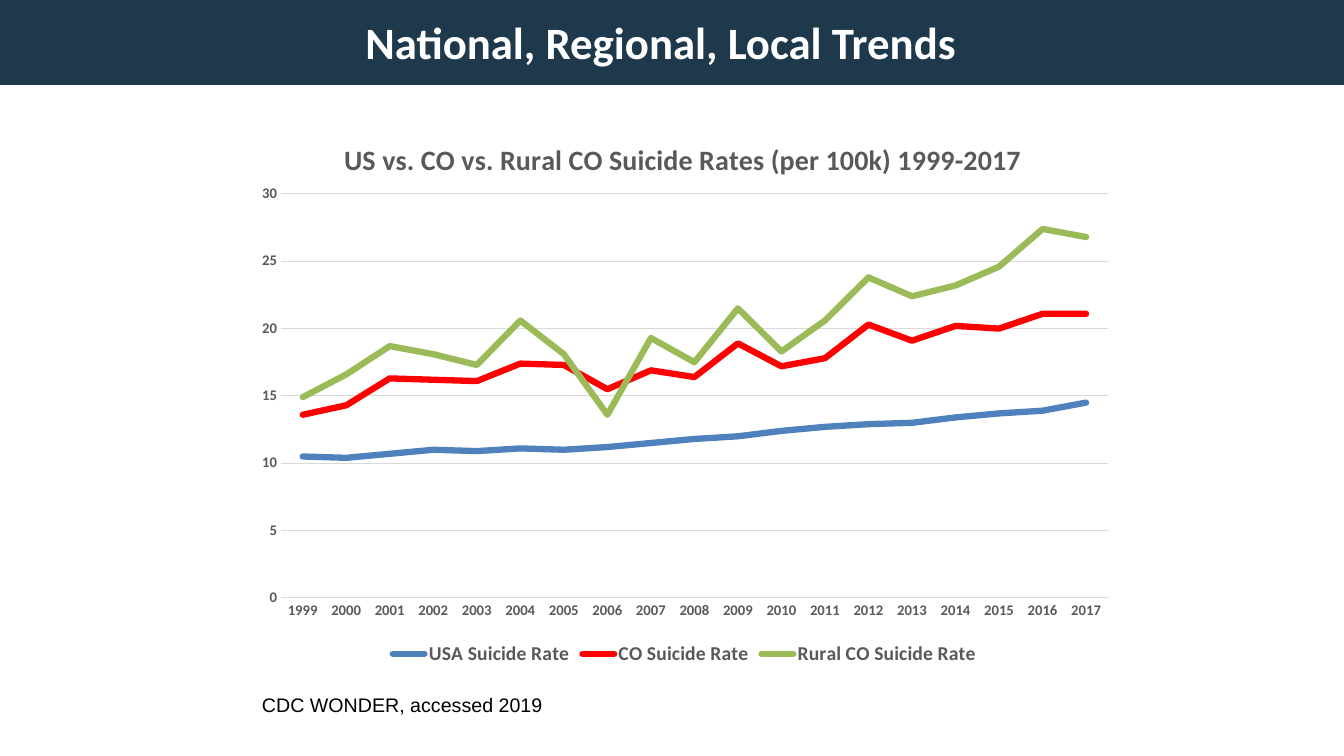
from dataclasses import dataclass

from lxml.etree import SubElement
from pptx import Presentation
from pptx.chart.data import CategoryChartData
from pptx.dml.color import RGBColor
from pptx.enum.chart import XL_CHART_TYPE, XL_LEGEND_POSITION, XL_TICK_MARK
from pptx.enum.shapes import MSO_SHAPE
from pptx.enum.text import MSO_ANCHOR, MSO_AUTO_SIZE, PP_ALIGN
from pptx.oxml.ns import qn
from pptx.util import Pt

EMU_PER_PX = 914400 / 100.8


@dataclass(frozen=True)
class Theme:
    """Colours, fonts and type sizes of the slide."""

    band: str = "1E384C"
    light: str = "FFFFFF"
    dark: str = "000000"
    muted: str = "595959"
    grid: str = "D9D9D9"
    heading_font: str = "Calibri"
    source_font: str = "Arial"
    title_size: float = 32
    chart_title_size: float = 20
    body_size: float = 14
    axis_size: float = 10.5
    grid_width: float = 0.75
    series_width: float = 4.5


THEME = Theme()
YEARS = [str(year) for year in range(1999, 2018)]
RATES = [
    ("USA Suicide Rate", "4F81BD",
     [10.5, 10.4, 10.7, 11, 10.9, 11.1, 11, 11.2, 11.5, 11.8,
      12, 12.4, 12.7, 12.9, 13, 13.4, 13.7, 13.9, 14.5]),
    ("CO Suicide Rate", "FF0000",
     [13.6, 14.3, 16.3, 16.2, 16.1, 17.4, 17.3, 15.5, 16.9, 16.4,
      18.9, 17.2, 17.8, 20.3, 19.1, 20.2, 20, 21.1, 21.1]),
    ("Rural CO Suicide Rate", "9BBB59",
     [14.9, 16.6, 18.7, 18.1, 17.3, 20.6, 18.1, 13.6, 19.3, 17.5,
      21.5, 18.3, 20.6, 23.8, 22.4, 23.2, 24.6, 27.4, 26.8]),
]


def px(length):
    """Turn pixels into EMU."""
    return round(length * EMU_PER_PX)


def place(box):
    """Turn a left, top, width, height box in pixels into EMU."""
    return [px(length) for length in box]


def style_font(font, size, color=THEME.muted, name=THEME.heading_font, bold=True):
    """Set the size, colour, face and weight of a font."""
    font.size = Pt(size)
    font.color.rgb = RGBColor.from_string(color)
    font.name = name
    font.bold = bold


def style_line(line, color, width):
    """Set the colour and width of a line."""
    line.color.rgb = RGBColor.from_string(color)
    line.width = Pt(width)


def write_text(frame, text, align=PP_ALIGN.LEFT, anchor=MSO_ANCHOR.TOP, **font):
    """Write one formatted paragraph into a text frame."""
    frame.word_wrap = True
    frame.auto_size = MSO_AUTO_SIZE.NONE
    frame.vertical_anchor = anchor
    para = frame.paragraphs[0]
    para.alignment = align
    span = para.add_run()
    span.text = text
    style_font(span.font, **font)


def set_layout(layout, chart_box, left, top, width=None, height=None, inner=False):
    """Fix a chart part at pixel offsets inside the chart box."""
    for child in list(layout):
        layout.remove(child)
    manual = SubElement(layout, qn("c:manualLayout"))
    if inner:
        SubElement(manual, qn("c:layoutTarget")).set("val", "inner")
    for mode in ("xMode", "yMode"):
        SubElement(manual, qn(f"c:{mode}")).set("val", "edge")
    spans = {"x": (left, chart_box[2]), "y": (top, chart_box[3]),
             "w": (width, chart_box[2]), "h": (height, chart_box[3])}
    for tag, (length, whole) in spans.items():
        if length is not None:
            SubElement(manual, qn(f"c:{tag}")).set("val", str(round(length / whole, 4)))


def add_header(page, box):
    """Draw the header band behind the title placeholder."""
    left, top, width, height = box
    band = page.shapes.add_shape(MSO_SHAPE.RECTANGLE, *place(box))
    band.shadow.inherit = False
    band.fill.solid()
    band.fill.fore_color.rgb = RGBColor.from_string(THEME.band)
    band.line.fill.background()
    page.shapes._spTree.insert(2, band._element)
    title = page.shapes.title
    title.left, title.top, title.width, title.height = place(
        (left + 46, top + 7, width - 114, height - 15))
    write_text(title.text_frame, "National, Regional, Local Trends",
               align=PP_ALIGN.CENTER, anchor=MSO_ANCHOR.MIDDLE,
               size=THEME.title_size, color=THEME.light)


def style_axes(chart):
    """Format both axes and the gridlines."""
    for axis in (chart.category_axis, chart.value_axis):
        axis.major_tick_mark = axis.minor_tick_mark = XL_TICK_MARK.NONE
        style_font(axis.tick_labels.font, THEME.axis_size)
    style_line(chart.category_axis.format.line, THEME.grid, THEME.grid_width)
    values = chart.value_axis
    values.minimum_scale, values.maximum_scale, values.major_unit = 0, 30, 5
    values.format.line.fill.background()
    style_line(values.major_gridlines.format.line, THEME.grid, THEME.grid_width)


def add_rate_chart(page, box):
    """Draw the line chart of the three rates."""
    table = CategoryChartData()
    table.categories = YEARS
    for name, _, rates in RATES:
        table.add_series(name, rates)
    chart = page.shapes.add_chart(XL_CHART_TYPE.LINE, *place(box), table).chart
    style_font(chart.font, 10, color=THEME.dark, bold=False)
    style_axes(chart)
    for series, (_, color, _) in zip(chart.plots[0].series, RATES):
        series.smooth = False
        style_line(series.format.line, color, THEME.series_width)
        series.format.line._ln.set("cap", "rnd")

    chart.has_title = True
    title = chart.chart_title
    write_text(title.text_frame, "US vs. CO vs. Rural CO Suicide Rates (per 100k) 1999-2017",
               align=PP_ALIGN.CENTER, size=THEME.chart_title_size)
    title_layout = title._element.find(qn("c:layout"))
    if title_layout is None:
        title_layout = title._element.makeelement(qn("c:layout"))
        title._element.find(qn("c:tx")).addnext(title_layout)
    set_layout(title_layout, box, 95, 22)

    chart.has_legend = True
    chart.legend.position = XL_LEGEND_POSITION.BOTTOM
    chart.legend.include_in_layout = False
    style_font(chart.legend.font, THEME.body_size)

    plot_area = chart._chartSpace.chart.plotArea
    plot_layout = plot_area.find(qn("c:layout"))
    if plot_layout is None:
        plot_layout = plot_area.makeelement(qn("c:layout"))
        plot_area.insert(0, plot_layout)
    set_layout(plot_layout, box, 37, 81, 827, 404, inner=True)


def add_source(page, box):
    """Write the data source below the chart."""
    source = page.shapes.add_textbox(*place(box))
    write_text(source.text_frame, "CDC WONDER, accessed 2019", size=THEME.body_size,
               color=THEME.dark, name=THEME.source_font, bold=False)


def main():
    """Build the slide and save the deck."""
    deck = Presentation()
    deck.slide_width, deck.slide_height = px(1344), px(756)
    page = deck.slides.add_slide(deck.slide_layouts[5])
    add_header(page, (0, 0, 1344, 85))
    add_rate_chart(page, (244, 113, 881, 557))
    add_source(page, (252, 688, 318, 39))
    deck.save("out.pptx")


if __name__ == "__main__":
    main()
